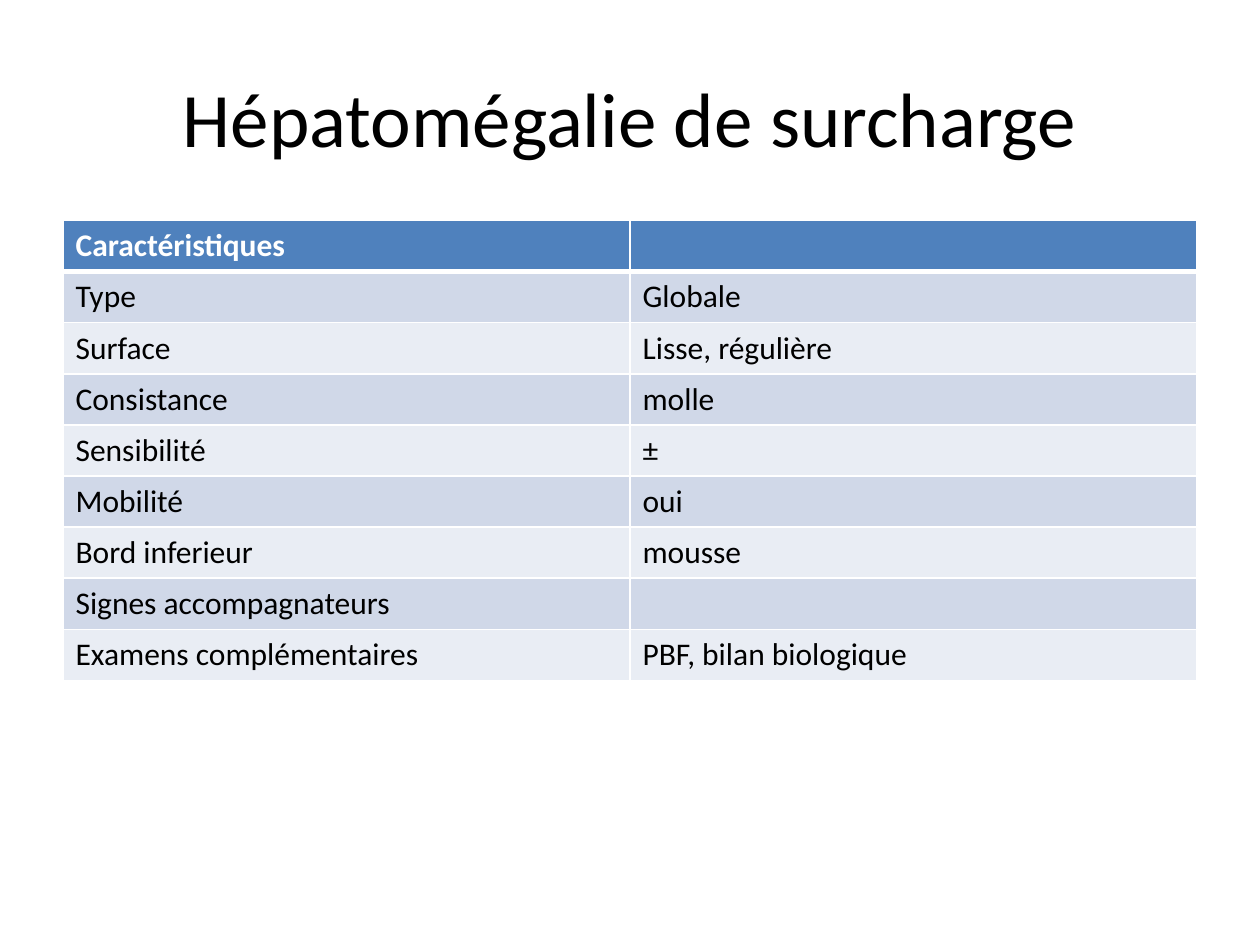
from lxml import etree
from pptx import Presentation
from pptx.dml.color import RGBColor
from pptx.enum.text import MSO_ANCHOR, PP_ALIGN
from pptx.oxml.ns import qn
from pptx.util import Inches, Pt

CENTER = PP_ALIGN.CENTER
MIDDLE = MSO_ANCHOR.MIDDLE
TITLE_ONLY = 5

BLACK = RGBColor(0x00, 0x00, 0x00)
WHITE = RGBColor(0xFF, 0xFF, 0xFF)
HEADER_BLUE = RGBColor(0x4F, 0x81, 0xBD)
BAND_DARK = RGBColor(0xD0, 0xD8, 0xE8)
BAND_LIGHT = RGBColor(0xE9, 0xED, 0xF4)

TITLE_FONT = {"name": "Calibri", "size": Pt(44), "bold": False}
HEADER_FONT = {"name": "Calibri", "size": Pt(18), "bold": True}
BODY_FONT = {"name": "Calibri", "size": Pt(18), "bold": False}

ROWS = [
    ("Caractéristiques", ""),
    ("Type", "Globale"),
    ("Surface", "Lisse, régulière"),
    ("Consistance", "molle"),
    ("Sensibilité", "±"),
    ("Mobilité", "oui"),
    ("Bord inferieur", "mousse"),
    ("Signes accompagnateurs", ""),
    ("Examens complémentaires", "PBF, bilan biologique"),
]


def write_text(text_frame, text, font_format, color):
    """Write one formatted run; an empty text leaves the frame as it is."""
    if not text:
        return
    run = text_frame.paragraphs[0].add_run()
    run.text = text
    for name, value in font_format.items():
        setattr(run.font, name, value)
    run.font.color.rgb = color


def set_borders(cell, widths):
    """Draw white cell borders; widths maps each side to points."""
    properties = cell._tc.get_or_add_tcPr()
    for side, width in widths.items():
        line = etree.SubElement(properties, qn(f"a:ln{side}"), w=str(Pt(width)))
        fill = etree.SubElement(line, qn("a:solidFill"))
        etree.SubElement(fill, qn("a:srgbClr"), val=str(WHITE))


def add_title(slide, text):
    title = slide.shapes.title
    title.left, title.top = Inches(0.5), Inches(0.3)
    title.width, title.height = Inches(9), Inches(1.25)
    title.text_frame.vertical_anchor = MIDDLE
    title.text_frame.paragraphs[0].alignment = CENTER
    write_text(title.text_frame, text, TITLE_FONT, BLACK)


def add_characteristics_table(slide, rows):
    table = slide.shapes.add_table(
        len(rows), len(rows[0]),
        Inches(0.5), Inches(1.75), Inches(9), Inches(3.65),
    ).table
    for row_index, row in enumerate(rows):
        # Header row, then alternating bands
        if row_index == 0:
            fill, font_format, color = HEADER_BLUE, HEADER_FONT, WHITE
        else:
            fill = BAND_DARK if row_index % 2 else BAND_LIGHT
            font_format, color = BODY_FONT, BLACK
        # The rule under the header is thicker on both sides of the edge
        widths = {"L": 1, "R": 1,
                  "T": 3 if row_index == 1 else 1,
                  "B": 3 if row_index == 0 else 1}
        for column_index, text in enumerate(row):
            cell = table.cell(row_index, column_index)
            set_borders(cell, widths)
            cell.fill.solid()
            cell.fill.fore_color.rgb = fill
            write_text(cell.text_frame, text, font_format, color)


def main():
    presentation = Presentation()
    presentation.slide_width = Inches(10)
    presentation.slide_height = Inches(7.5)
    slide = presentation.slides.add_slide(presentation.slide_layouts[TITLE_ONLY])
    add_title(slide, "Hépatomégalie de surcharge")
    add_characteristics_table(slide, ROWS)
    presentation.save("out.pptx")


if __name__ == "__main__":
    main()
